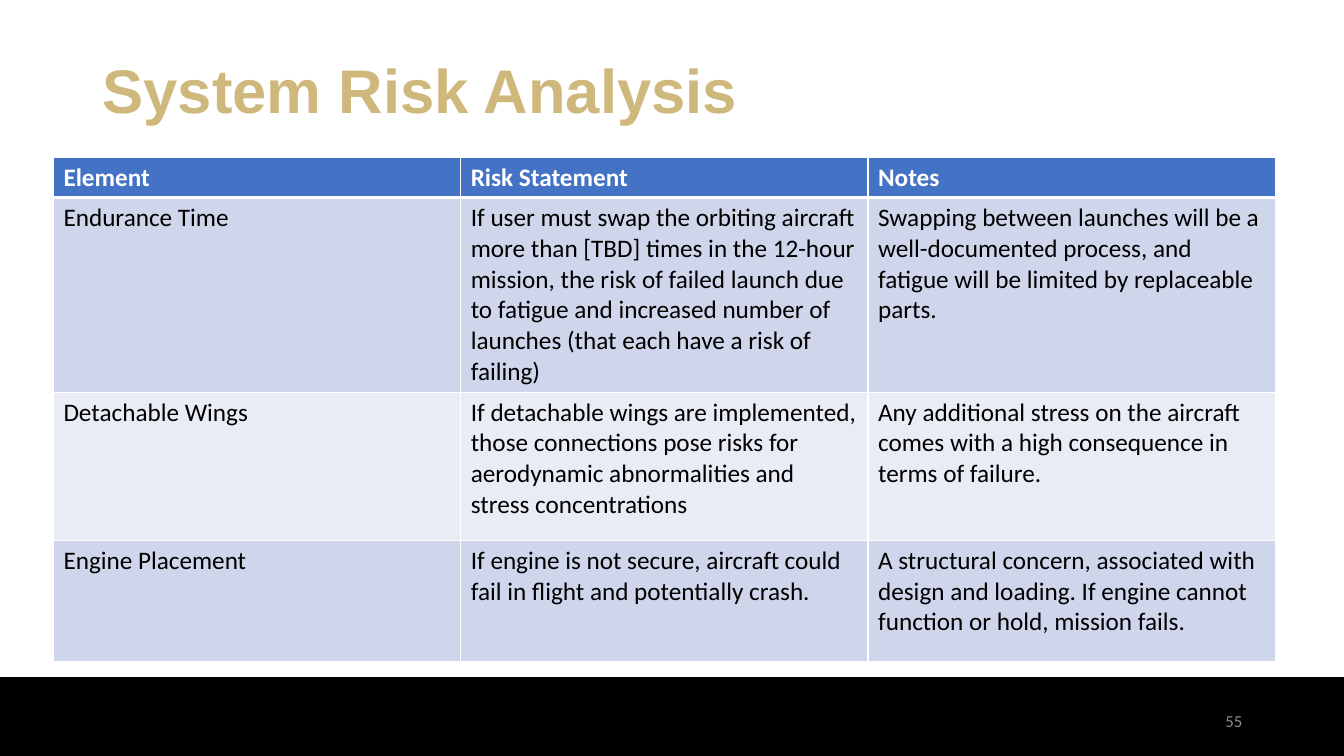
from lxml.etree import SubElement
from pptx import Presentation
from pptx.dml.color import RGBColor
from pptx.enum.shapes import MSO_SHAPE
from pptx.enum.text import MSO_ANCHOR, PP_ALIGN
from pptx.oxml.ns import qn
from pptx.util import Inches, Pt

TITLE = "System Risk Analysis"
PAGE_NUMBER = "55"
RISKS = [
    ("Element", "Risk Statement", "Notes"),
    ("Endurance Time",
     "If user must swap the orbiting aircraft more than [TBD] times in the 12-hour "
     "mission, the risk of failed launch due to fatigue and increased number of "
     "launches (that each have a risk of failing)",
     "Swapping between launches will be a well-documented process, and fatigue will "
     "be limited by replaceable parts."),
    ("Detachable Wings",
     "If detachable wings are implemented, those connections pose risks for "
     "aerodynamic abnormalities and stress concentrations",
     "Any additional stress on the aircraft comes with a high consequence in terms "
     "of failure."),
    ("Engine Placement",
     "If engine is not secure, aircraft could fail in flight and potentially crash.",
     "A structural concern, associated with design and loading. If engine cannot "
     "function or hold, mission fails."),
]
ROW_HEIGHTS = [0.4, 1.93, 1.47, 1.2]
COLUMN_WIDTH = 4.04

BLACK = RGBColor(0x00, 0x00, 0x00)
WHITE = RGBColor(0xFF, 0xFF, 0xFF)
GOLD = RGBColor(0xCF, 0xB8, 0x7C)
GREY = RGBColor(0x8C, 0x8C, 0x8C)
HEADER_BLUE = RGBColor(0x44, 0x72, 0xC4)
BANDS = [RGBColor(0xE9, 0xEB, 0xF5), RGBColor(0xCF, 0xD5, 0xEA)]


def write(paragraph, text, size, color, font="Calibri", bold=False):
    run = paragraph.add_run()
    run.text = text
    run.font.name = font
    run.font.size = Pt(size)
    run.font.bold = bold
    run.font.color.rgb = color


def add_label(slide, left, top, width, height):
    """Add a wrapping, vertically centred text box and return its paragraph."""
    frame = slide.shapes.add_textbox(
        Inches(left), Inches(top), Inches(width), Inches(height)).text_frame
    frame.word_wrap = True
    frame.vertical_anchor = MSO_ANCHOR.MIDDLE
    return frame.paragraphs[0]


def set_borders(cell, top, bottom):
    """Draw white cell borders; top and bottom are widths in points."""
    properties = cell._tc.get_or_add_tcPr()
    for side, width in (("L", 1), ("R", 1), ("T", top), ("B", bottom)):
        line = SubElement(properties, qn(f"a:ln{side}"), w=str(Pt(width)))
        fill = SubElement(line, qn("a:solidFill"))
        SubElement(fill, qn("a:srgbClr"), val=str(WHITE))


def add_risk_table(slide):
    columns = len(RISKS[0])
    table = slide.shapes.add_table(
        len(RISKS), columns, Inches(0.53), Inches(1.56),
        Inches(COLUMN_WIDTH * columns), Inches(sum(ROW_HEIGHTS))).table
    for column in table.columns:
        column.width = Inches(COLUMN_WIDTH)
    for r, (risk, height) in enumerate(zip(RISKS, ROW_HEIGHTS)):
        header = r == 0
        table.rows[r].height = Inches(height)
        for c, text in enumerate(risk):
            cell = table.cell(r, c)
            set_borders(cell, top=3 if r == 1 else 1, bottom=3 if header else 1)
            cell.fill.solid()
            cell.fill.fore_color.rgb = HEADER_BLUE if header else BANDS[r % 2]
            write(cell.text_frame.paragraphs[0], text, 18,
                  WHITE if header else BLACK, bold=header)


def main():
    deck = Presentation()
    deck.slide_width, deck.slide_height = Inches(13.33), Inches(7.5)
    slide = deck.slides.add_slide(deck.slide_layouts[6])

    footer = slide.shapes.add_shape(
        MSO_SHAPE.RECTANGLE, 0, Inches(6.72), deck.slide_width, Inches(0.78))
    footer.shadow.inherit = False
    footer.fill.solid()
    footer.fill.fore_color.rgb = BLACK
    footer.line.color.rgb = BLACK
    footer.line.width = Pt(1)

    title = add_label(slide, 0.92, 0.2, 11.5, 1.45)
    title.line_spacing = 0.9
    write(title, TITLE, 44, GOLD, font="Arial", bold=True)

    number = add_label(slide, 9.42, 6.95, 3, 0.4)
    number.alignment = PP_ALIGN.RIGHT
    write(number, PAGE_NUMBER, 12, GREY)

    add_risk_table(slide)
    deck.save("out.pptx")


if __name__ == "__main__":
    main()
